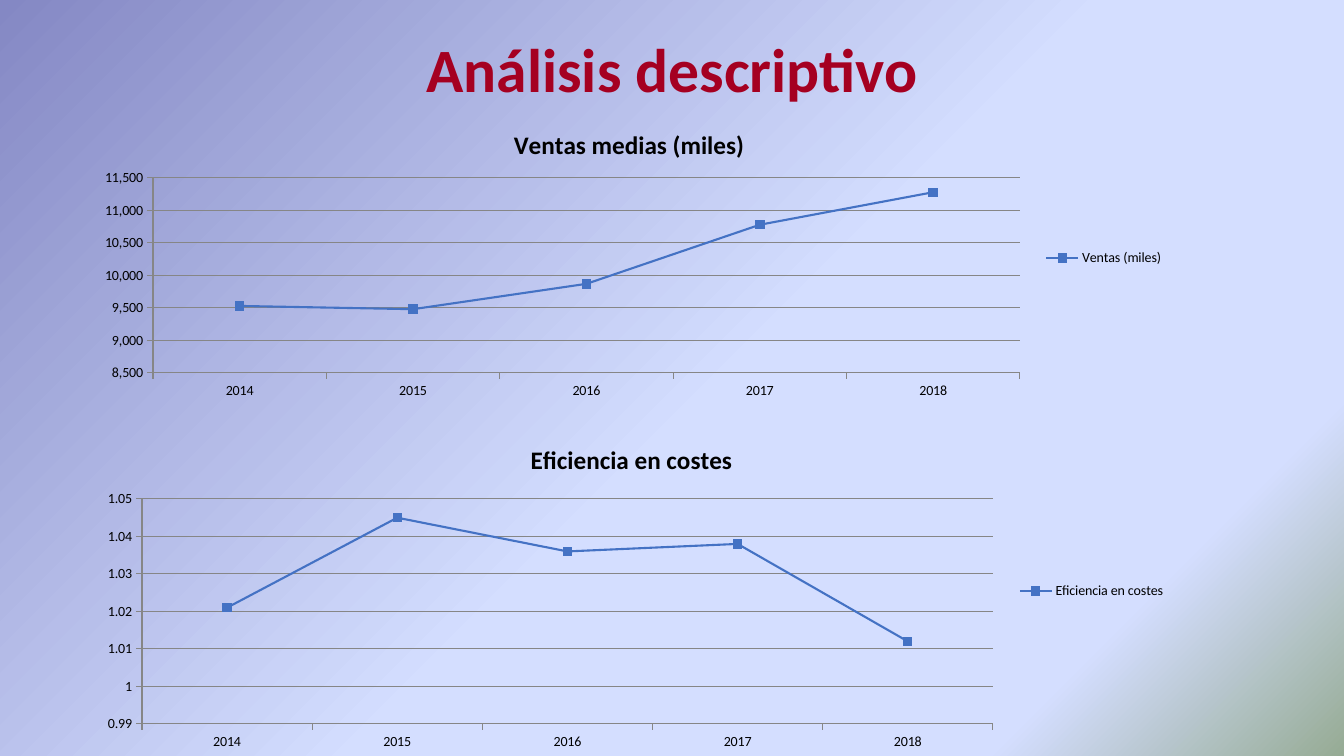
from dataclasses import dataclass

from lxml.etree import SubElement
from pptx import Presentation
from pptx.chart.axis import _BaseAxis as Axis
from pptx.chart.chart import Chart
from pptx.chart.data import CategoryChartData
from pptx.dml.color import RGBColor
from pptx.enum.chart import XL_CHART_TYPE as ChartType
from pptx.enum.chart import XL_LEGEND_POSITION as LegendPosition
from pptx.enum.chart import XL_MARKER_STYLE as MarkerStyle
from pptx.enum.chart import XL_TICK_MARK as TickMark
from pptx.enum.text import MSO_ANCHOR as Anchor
from pptx.enum.text import PP_ALIGN as Align
from pptx.oxml.ns import qn
from pptx.slide import Slide
from pptx.util import Emu, Pt

EMU_PER_PX = 914400 / 100.8
YEARS = ("2014", "2015", "2016", "2017", "2018")


@dataclass(frozen=True)
class Theme:
    font: str = "Calibri"
    heading: str = "A50021"
    text: str = "000000"
    series: str = "4472C4"
    grid: str = "868686"
    heading_size: int = 44
    chart_title_size: int = 18
    chart_size: int = 10
    line_width: float = 1.5
    grid_width: float = 0.75
    marker_size: int = 6
    background: tuple[tuple[int, str], ...] = (
        (0, "8488C4"),
        (53, "D4DEFF"),
        (83, "D4DEFF"),
        (100, "96AB94"),
    )


@dataclass(frozen=True)
class Box:
    left: int
    top: int
    width: int
    height: int

    def emu(self) -> tuple[Emu, Emu, Emu, Emu]:
        return px(self.left), px(self.top), px(self.width), px(self.height)


@dataclass(frozen=True)
class LineChart:
    title: str
    series: str
    values: tuple[float, ...]
    frame: Box
    plot: Box
    minimum: float
    maximum: float
    step: float
    number_format: str


THEME = Theme()
HEADING_BOX = Box(93, 0, 1159, 146)
CHARTS = (
    LineChart(
        "Eficiencia en costes", "Eficiencia en costes",
        (1.021, 1.045, 1.036, 1.038, 1.012),
        Box(87, 426, 1089, 330), Box(142, 499, 851, 225),
        0.99, 1.05, 0.01, "General",
    ),
    LineChart(
        "Ventas medias (miles)", "Ventas (miles)",
        (9530, 9480, 9870, 10780, 11280),
        Box(84, 112, 1090, 292), Box(153, 178, 867, 195),
        8500, 11500, 500, "#,##0",
    ),
)


def px(length: int) -> Emu:
    return Emu(round(length * EMU_PER_PX))


def color(value: str) -> RGBColor:
    return RGBColor.from_string(value)


def paint_background(slide: Slide) -> None:
    fill = slide.background.fill
    fill.gradient()
    fill.gradient_angle = 315
    stops = next(slide.element.iter(qn("a:gsLst")))
    for stop in list(stops):
        stops.remove(stop)
    for position, value in THEME.background:
        stop = SubElement(stops, qn("a:gs"), pos=str(position * 1000))
        SubElement(stop, qn("a:srgbClr"), val=value)


def add_heading(slide: Slide, text: str) -> None:
    text_frame = slide.shapes.add_textbox(*HEADING_BOX.emu()).text_frame
    text_frame.word_wrap = True
    text_frame.vertical_anchor = Anchor.MIDDLE
    text_frame.text = text
    paragraph = text_frame.paragraphs[0]
    paragraph.alignment = Align.CENTER
    paragraph.line_spacing = 0.9
    font = paragraph.runs[0].font
    font.name, font.size, font.bold = THEME.font, Pt(THEME.heading_size), True
    font.color.rgb = color(THEME.heading)


def place_plot(chart: Chart, frame: Box, plot: Box) -> None:
    plot_area = next(chart.element.iter(qn("c:plotArea")))
    for old_layout in plot_area.findall(qn("c:layout")):
        plot_area.remove(old_layout)
    layout = SubElement(plot_area, qn("c:layout"))
    plot_area.insert(0, layout)
    manual = SubElement(layout, qn("c:manualLayout"))
    settings = {
        "layoutTarget": "inner",
        "xMode": "edge",
        "yMode": "edge",
        "x": (plot.left - frame.left) / frame.width,
        "y": (plot.top - frame.top) / frame.height,
        "w": plot.width / frame.width,
        "h": plot.height / frame.height,
    }
    for name, value in settings.items():
        SubElement(manual, qn(f"c:{name}"), val=str(value))


def style_axis(axis: Axis) -> None:
    axis.major_tick_mark = TickMark.OUTSIDE
    axis.minor_tick_mark = TickMark.NONE
    axis.format.line.color.rgb = color(THEME.grid)
    axis.format.line.width = Pt(THEME.grid_width)


def add_line_chart(slide: Slide, item: LineChart) -> None:
    data = CategoryChartData(number_format=item.number_format)
    data.categories = YEARS
    data.add_series(item.series, item.values)
    chart = slide.shapes.add_chart(
        ChartType.LINE_MARKERS, *item.frame.emu(), data
    ).chart
    chart.font.name, chart.font.size = THEME.font, Pt(THEME.chart_size)
    chart.font.color.rgb = color(THEME.text)

    chart.has_title = True
    chart.chart_title.include_in_layout = False
    title_frame = chart.chart_title.text_frame
    title_frame.text = item.title
    font = title_frame.paragraphs[0].runs[0].font
    font.name, font.size, font.bold = THEME.font, Pt(THEME.chart_title_size), True
    font.color.rgb = color(THEME.text)

    chart.has_legend = True
    chart.legend.position = LegendPosition.RIGHT
    chart.legend.include_in_layout = False

    style_axis(chart.category_axis)
    value_axis = chart.value_axis
    style_axis(value_axis)
    value_axis.minimum_scale = item.minimum
    value_axis.maximum_scale = item.maximum
    value_axis.major_unit = item.step
    value_axis.has_major_gridlines = True
    grid_line = value_axis.major_gridlines.format.line
    grid_line.color.rgb = color(THEME.grid)
    grid_line.width = Pt(THEME.grid_width)
    value_axis.tick_labels.number_format = item.number_format
    value_axis.tick_labels.number_format_is_linked = False

    chart.plots[0].vary_by_categories = False
    series = chart.plots[0].series[0]
    series.smooth = False
    series.format.line.color.rgb = color(THEME.series)
    series.format.line.width = Pt(THEME.line_width)
    marker = series.marker
    marker.style, marker.size = MarkerStyle.SQUARE, THEME.marker_size
    marker.format.fill.solid()
    marker.format.fill.fore_color.rgb = color(THEME.series)
    marker.format.line.color.rgb = color(THEME.series)
    place_plot(chart, item.frame, item.plot)


def main() -> None:
    presentation = Presentation()
    presentation.slide_width, presentation.slide_height = px(1344), px(756)
    slide = presentation.slides.add_slide(presentation.slide_layouts[6])
    paint_background(slide)
    add_heading(slide, "Análisis descriptivo")
    for item in CHARTS:
        add_line_chart(slide, item)
    presentation.save("out.pptx")


if __name__ == "__main__":
    main()
